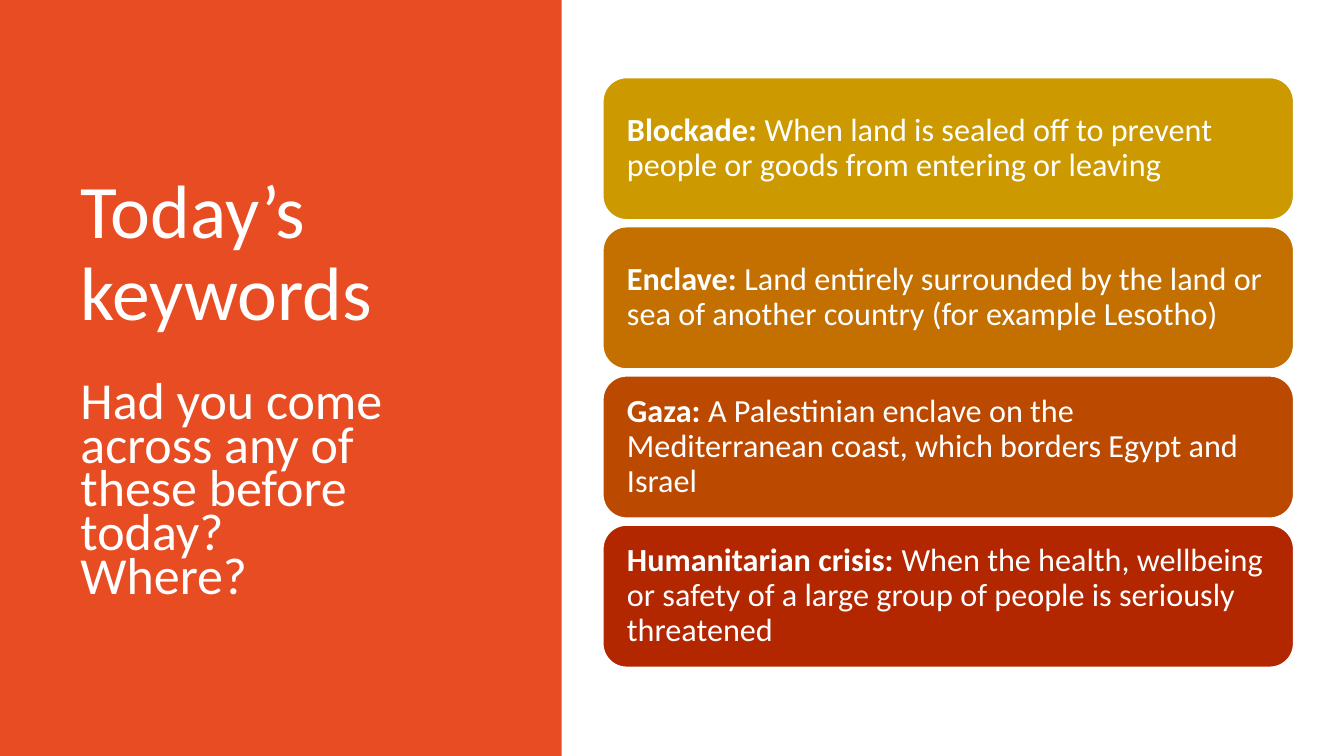
import pptx
import pptx.util
import pptx.dml.color
import pptx.enum.shapes
import pptx.enum.text

Inches = pptx.util.Inches
Pt = pptx.util.Pt
RGBColor = pptx.dml.color.RGBColor
SHAPE = pptx.enum.shapes.MSO_SHAPE

WHITE = RGBColor(0xFF, 0xFF, 0xFF)
ORANGE = RGBColor(0xE8, 0x4C, 0x22)
GOLD = RGBColor(0xCC, 0x99, 0x00)
AMBER = RGBColor(0xC3, 0x70, 0x00)
RUST = RGBColor(0xBB, 0x49, 0x00)
RED = RGBColor(0xB2, 0x26, 0x00)

TERMS = [
    ("Blockade: ", "When land is sealed off to prevent people or goods from entering or leaving", GOLD),
    ("Enclave: ", "Land entirely surrounded by the land or sea of another country (for example Lesotho)", AMBER),
    ("Gaza: ", "A Palestinian enclave on the Mediterranean coast, which borders Egypt and Israel", RUST),
    ("Humanitarian crisis: ", "When the health, wellbeing or safety of a large group of people is seriously threatened", RED),
]
CARD_TOP = 0.77
CARD_STEP = 1.48


def apply(target, values):
    for name, value in values.items():
        setattr(target, name, value)


def place(shape, left, top, width, height):
    apply(shape, {"left": Inches(left), "top": Inches(top),
                  "width": Inches(width), "height": Inches(height)})


def set_frame(frame, side=0.1, edge=0.05):
    apply(frame, {
        "word_wrap": True,
        "auto_size": pptx.enum.text.MSO_AUTO_SIZE.NONE,
        "vertical_anchor": pptx.enum.text.MSO_ANCHOR.MIDDLE,
        "margin_left": Inches(side), "margin_right": Inches(side),
        "margin_top": Inches(edge), "margin_bottom": Inches(edge),
    })


def write(para, parts, size, spacing):
    apply(para, {"alignment": pptx.enum.text.PP_ALIGN.LEFT,
                 "line_spacing": spacing, "space_before": Pt(0)})
    for text, bold in parts:
        run = para.add_run()
        run.text = text
        apply(run.font, {"name": "Calibri", "size": Pt(size), "bold": bold})
        run.font.color.rgb = WHITE


def add_block(slide, kind, box, fill):
    block = slide.shapes.add_shape(kind, *map(Inches, box))
    block.shadow.inherit = False
    block.fill.solid()
    block.fill.fore_color.rgb = fill
    block.line.fill.background()
    return block


def add_panel(slide):
    panel = add_block(slide, SHAPE.RECTANGLE, (0, 0, 5.57, 7.5), ORANGE)
    slide.shapes.title.element.addprevious(panel.element)


def set_title(slide, text):
    title = slide.shapes.title
    place(title, 0.7, 1.8, 4.16, 1.46)
    set_frame(title.text_frame)
    write(title.text_frame.paragraphs[0], [(text, False)], 54, 0.9)


def add_card(slide, top, term, meaning, fill):
    card = add_block(slide, SHAPE.ROUNDED_RECTANGLE, (5.98, top, 6.85, 1.41), fill)
    card.line.color.rgb = WHITE
    card.line.width = Pt(1)
    set_frame(card.text_frame, 0.17, 0.16)
    write(card.text_frame.paragraphs[0], [(term, True), (meaning, False)], 23, 0.9)


def add_prompt(slide, lines):
    box = slide.shapes.add_textbox(*map(Inches, (0.7, 3.7, 4.16, 2.4)))
    frame = box.text_frame
    set_frame(frame)
    for index, line in enumerate(lines):
        para = frame.add_paragraph() if index else frame.paragraphs[0]
        write(para, [(line, False)], 37.1, 0.7)


def main():
    deck = pptx.Presentation()
    apply(deck, {"slide_width": Inches(13.33), "slide_height": Inches(7.5)})
    slide = deck.slides.add_slide(deck.slide_layouts[5])
    add_panel(slide)
    set_title(slide, "Today’s keywords")
    for index, (term, meaning, fill) in enumerate(TERMS):
        add_card(slide, CARD_TOP + index * CARD_STEP, term, meaning, fill)
    add_prompt(slide, ["Had you come across any of these before today?", "Where?"])
    deck.save("out.pptx")


if __name__ == "__main__":
    main()
